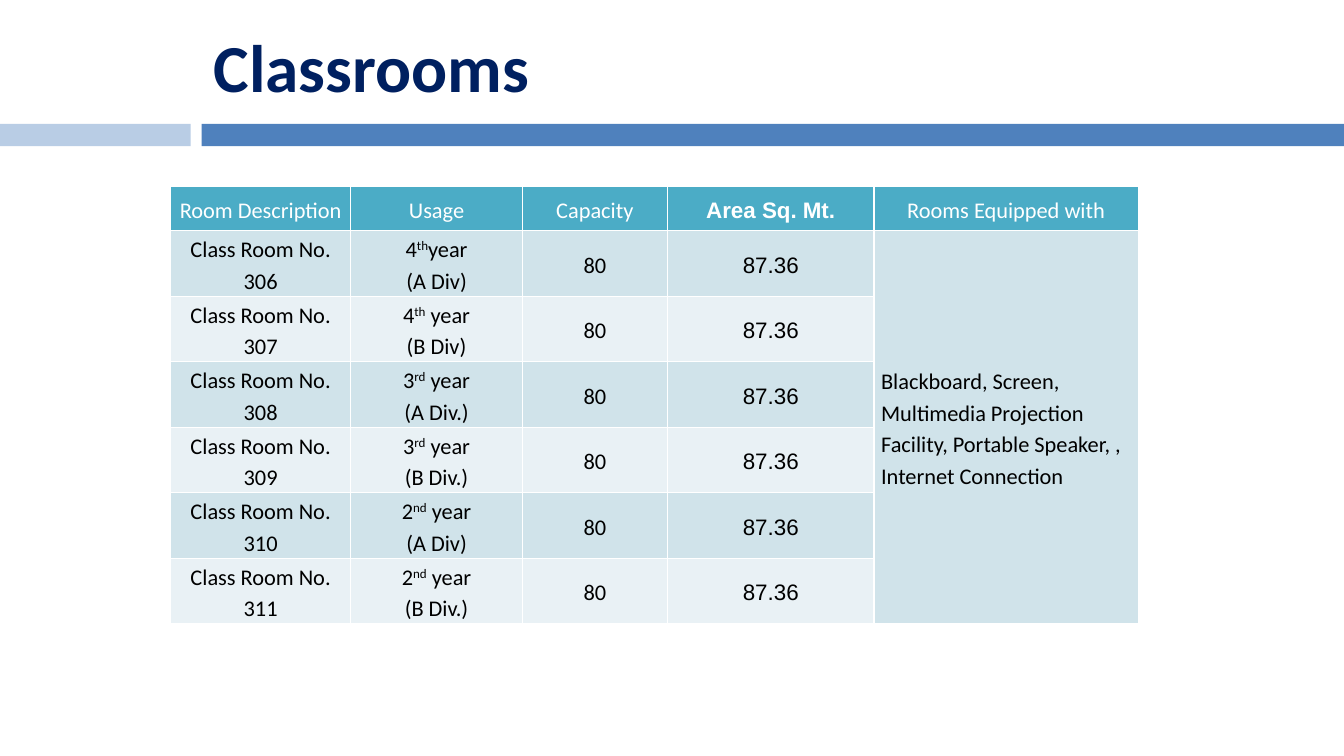
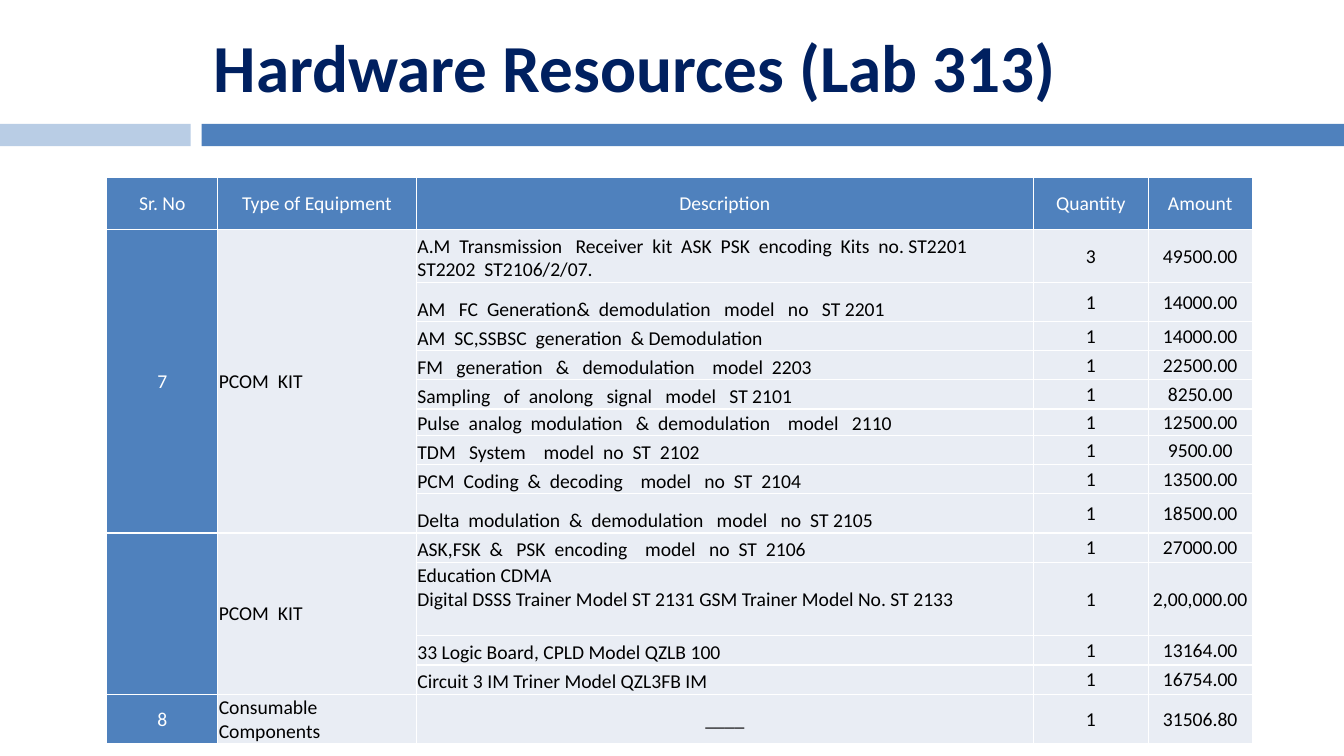
"""Build two slides that list the classrooms and the lab hardware."""
from lxml import etree
from pptx import Presentation
from pptx.dml.color import RGBColor
from pptx.enum.shapes import MSO_SHAPE
from pptx.enum.text import MSO_ANCHOR, PP_ALIGN
from pptx.oxml.ns import qn
from pptx.util import Inches, Pt

RECT = MSO_SHAPE.RECTANGLE
MID, LOW = MSO_ANCHOR.MIDDLE, MSO_ANCHOR.BOTTOM
LEFT, CENTER = PP_ALIGN.LEFT, PP_ALIGN.CENTER
WHITE, BLACK, NAVY = "FFFFFF", "000000", "002060"
BLUE, PALE, TEAL = "4F81BD", "B9CDE5", "4BACC6"
WIDE, HIGH = 13.33, 7.5
EDGE = WIDE * 0.15


def tint(code):
    return RGBColor.from_string(code)


def frame(cell, fill):
    props = cell._tc.get_or_add_tcPr()
    for side in ("lnL", "lnR", "lnT", "lnB"):
        line = etree.SubElement(props, qn(f"a:{side}"), w=str(Pt(1)))
        solid = etree.SubElement(line, qn("a:solidFill"))
        etree.SubElement(solid, qn("a:srgbClr"), val=WHITE)
    cell.fill.solid()
    cell.fill.fore_color.rgb = tint(fill)


years = ["4|th|year\n(A Div)", "4|th| year\n(B Div)", "3|rd| year\n(A Div.)",
         "3|rd| year\n(B Div.)", "2|nd| year\n(A Div)", "2|nd| year\n(B Div.)"]
rooms = [["Room Description", "Usage", "Capacity", "Area Sq. Mt.", "Rooms Equipped with"]]
for num, year in enumerate(years, 306):
    rooms.append([f"Class Room No. {num}", year, "80", "87.36", ""])
rooms[1][4] = ("Blackboard, Screen,\nMultimedia Projection Facility, "
               "Portable Speaker, , Internet Connection")

kits = [
    ("A.M  Transmission   Receiver  kit  ASK  PSK  encoding  Kits  no. ST2201  ST2202  ST2106/2/07.",
     "3", "49500.00"),
    ("AM   FC  Generation&  demodulation   model   no   ST 2201", "1", "14000.00"),
    ("AM  SC,SSBSC  generation  & Demodulation", "1", "14000.00"),
    ("FM   generation   &   demodulation    model  2203", "1", "22500.00"),
    ("Sampling   of  anolong   signal   model   ST 2101", "1", "8250.00"),
    ("Pulse  analog  modulation   &  demodulation    model   2110", "1", "12500.00"),
    ("TDM   System    model  no  ST  2102", "1", "9500.00"),
    ("PCM  Coding  &  decoding    model   no  ST  2104", "1", "13500.00"),
    ("Delta  modulation  &  demodulation   model   no  ST 2105", "1", "18500.00"),
    ("ASK,FSK  &   PSK  encoding    model   no  ST  2106", "1", "27000.00"),
    ("Education CDMA\nDigital DSSS Trainer Model ST 2131 GSM Trainer Model No. ST 2133",
     "1", "2,00,000.00"),
    ("33 Logic Board, CPLD Model QZLB 100", "1", "13164.00"),
    ("Circuit 3 IM Triner Model QZL3FB IM", "1", "16754.00"),
    ("____", "1", "31506.80"),
]
leads = {1: ("7", "PCOM  KIT"), 10: ("", "PCOM  KIT"), 14: ("8", "Consumable   Components")}
gear = [["Sr. No", "Type of Equipment", "Description", "Quantity", "Amount"]]
for row, kit in enumerate(kits, 1):
    gear.append([*leads.get(row, ("", "")), *kit])

pages = [
    dict(title="Classrooms", data=rooms, at=(1.69, 1.85),
         cols=[1.79, 1.7, 1.44, 2.05, 2.62], rows=[0.44] + [0.65] * 6,
         spans=[(1, 6, 4)], head=TEAL, body=("E9F1F5", "D0E3EA"), keys=0,
         size=16, space=1.15, pads=(0.07, 0), left=(4,), low=(), arial=(3,)),
    dict(title="Hardware Resources (Lab 313)", data=gear, at=(1.06, 1.76),
         cols=[1.1, 1.97, 6.12, 1.14, 1.03],
         rows=[0.52, 0.52, 0.39, 0.29, 0.29, 0.29, 0.26, 0.29, 0.29, 0.39,
               0.29, 0.73, 0.29, 0.29, 0.49],
         spans=[(1, 9, 0), (1, 9, 1), (10, 13, 0), (10, 13, 1)],
         head=BLUE, body=("E9EDF4", "E9EDF4"), keys=1,
         size=14, space=1, pads=(0.01, 0.01), left=(1, 2), low=(2,), arial=()),
]

deck = Presentation()
deck.slide_width, deck.slide_height = Inches(WIDE), Inches(HIGH)
base = deck.slide_layouts[5]
head = base.placeholders[0]
head.left, head.top = Inches(EDGE), Inches(HIGH * 0.02)
head.width, head.height = Inches(WIDE - EDGE - 0.11), Inches(1)
bands = [(0, 1.15, WIDE, 0.4, WHITE), (0, 1.23, 1.89, 0.22, PALE),
         (EDGE, 1.23, WIDE - EDGE, 0.22, BLUE)]

for page in pages:
    slide = deck.slides.add_slide(base)
    if page is pages[0]:
        for spot, (*box, fill) in enumerate(bands, 2):
            band = slide.shapes.add_shape(RECT, *map(Inches, box))
            band.shadow.inherit = False
            band.fill.solid()
            band.fill.fore_color.rgb = tint(fill)
            band.line.fill.background()
            base.shapes.element.insert(spot, band.element)

    text = slide.shapes.title.text_frame
    text.text = page["title"]
    text.vertical_anchor = MID
    text.margin_left = text.margin_right = Inches(0.12)
    text.margin_top = text.margin_bottom = Inches(0.06)
    text.paragraphs[0].alignment = LEFT
    font = text.paragraphs[0].runs[0].font
    font.name, font.size, font.bold = "Calibri", Pt(48), True
    font.color.rgb = tint(NAVY)

    data, cols, rows = page["data"], page["cols"], page["rows"]
    box = (*page["at"], sum(cols), sum(rows))
    grid = slide.shapes.add_table(len(rows), len(cols), *map(Inches, box)).table
    grid.first_row = grid.horz_banding = False
    for col, width in enumerate(cols):
        grid.columns[col].width = Inches(width)
    for row, height in enumerate(rows):
        grid.rows[row].height = Inches(height)
    for top, end, col in page["spans"]:
        grid.cell(top, col).merge(grid.cell(end, col))

    side, over = page["pads"]
    for row, line in enumerate(data):
        for col, words in enumerate(line):
            cell = grid.cell(row, col)
            dark = row == 0 or col < page["keys"]
            flush = row > 0 and col in page["left"] and words != "____"
            multi = "\n" in words
            frame(cell, page["head"] if dark else page["body"][row % 2])
            cell.vertical_anchor = LOW if flush and col in page["low"] and not multi else MID
            cell.margin_left = cell.margin_right = Inches(side)
            cell.margin_top = Inches(over)
            cell.margin_bottom = Inches(0.24 if multi and col in page["low"] else 0)
            cell.text_frame.text = words
            for para in cell.text_frame.paragraphs:
                parts = para.text.split("|")
                para.text = parts[0]
                for part in parts[1:]:
                    para.add_run().text = part
                para.alignment = LEFT if flush else CENTER
                para.line_spacing = page["space"]
                for spot, run in enumerate(para.runs):
                    font = run.font
                    font.name = "Arial" if col in page["arial"] else "Calibri"
                    font.size = Pt(page["size"])
                    font.bold = row == 0 and col in page["arial"]
                    font.color.rgb = tint(WHITE if dark else BLACK)
                    if spot == 1:
                        run._r.get_or_add_rPr().set("baseline", "30000")

deck.save("out.pptx")
